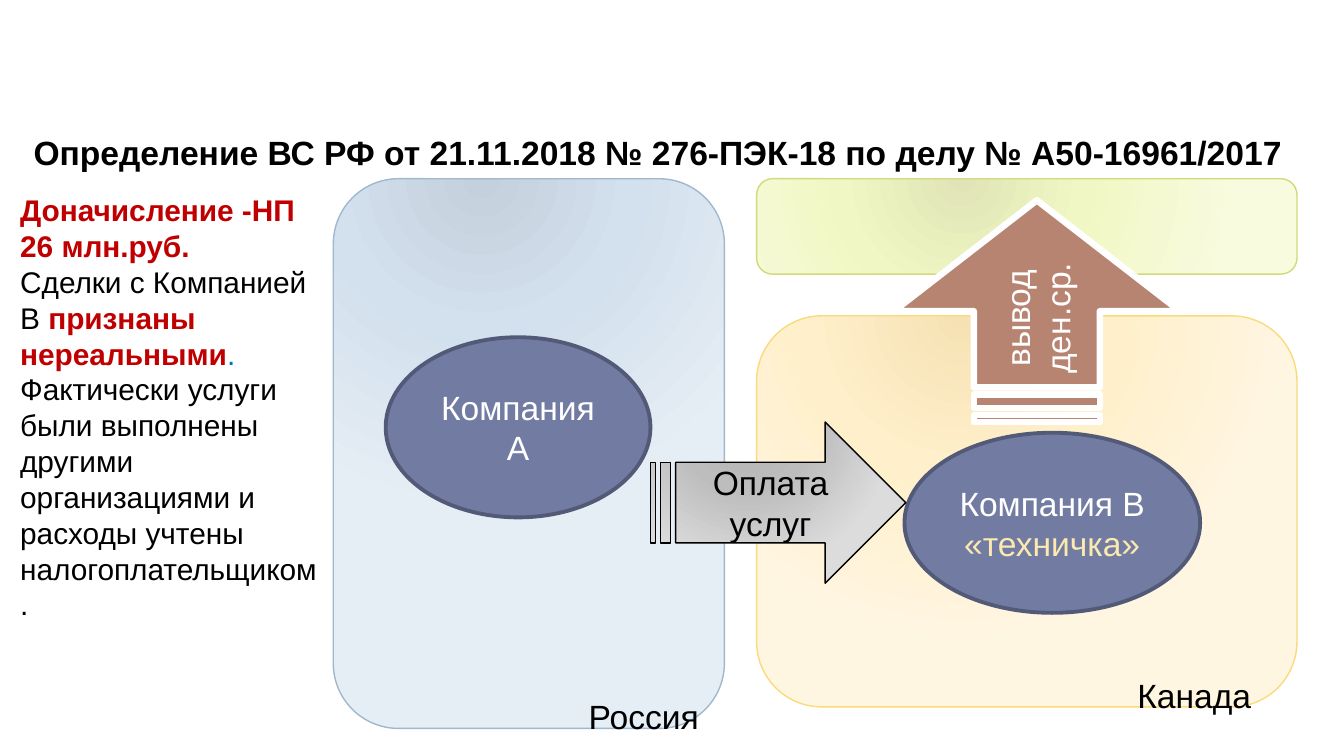
"""Build a slide on a tax dispute over payments to a shell company."""
from dataclasses import dataclass

from pptx import Presentation
from pptx.dml.color import RGBColor
from pptx.enum.shapes import MSO_SHAPE
from pptx.enum.text import MSO_ANCHOR, PP_ALIGN
from pptx.oxml import parse_xml
from pptx.oxml.ns import nsdecls, qn
from pptx.util import Inches, Pt


@dataclass(frozen=True)
class Theme:
    font: str = "Arial"
    size: int = 18
    body_size: int = 16
    black: str = "000000"
    white: str = "FFFFFF"
    red: str = "C00000"
    blue: str = "0070C0"
    cream: str = "FCE9AF"
    company: str = "727CA3"
    company_edge: str = "535A77"
    withdrawal: str = "B88472"
    russia: tuple = ("C4D0DC", "D3E0ED", "E6EEF5")
    russia_edge: str = "9FB8CD"
    canada: tuple = ("F5E1B3", "FFEFCA", "FFF6E2")
    canada_edge: str = "FADA7A"
    outlet: tuple = ("E0E4B6", "F1F7C4", "F8FBDE")
    outlet_edge: str = "D2DA7A"
    payment: tuple = ("AEAEAE", "BDBDBD", "DCDCDC")


THEME = Theme()


def write(shape, paragraphs, size=THEME.size, color=THEME.black,
          align=PP_ALIGN.CENTER, anchor=MSO_ANCHOR.MIDDLE):
    """Fill a shape with paragraphs of (text, color, bold) runs or plain strings."""
    frame = shape.text_frame
    frame.word_wrap = True
    frame.vertical_anchor = anchor
    frame.margin_left = frame.margin_right = Inches(0.05)
    frame.margin_top = frame.margin_bottom = Inches(0.05)
    for index, content in enumerate(paragraphs):
        paragraph = frame.paragraphs[0] if index == 0 else frame.add_paragraph()
        paragraph.alignment = align
        runs = [(content, color, False)] if isinstance(content, str) else content
        for text, run_color, bold in runs:
            run = paragraph.add_run()
            run.text = text
            run.font.name = THEME.font
            run.font.size = Pt(size)
            run.font.bold = bold
            run.font.color.rgb = RGBColor.from_string(run_color)


def add_text(slide, box, paragraphs, **text_format):
    """Add a text box."""
    write(slide.shapes.add_textbox(*map(Inches, box)), paragraphs, **text_format)


def fill_radial(shape, colors):
    """Give a shape a glow that spreads from above its top edge."""
    stops = "".join(
        f'<a:gs pos="{position}"><a:srgbClr val="{color}"/></a:gs>'
        for position, color in zip((0, 45000, 100000), colors))
    gradient = parse_xml(
        f'<a:gradFill {nsdecls("a")} rotWithShape="1"><a:gsLst>{stops}</a:gsLst>'
        '<a:path path="circle"><a:fillToRect l="38000" t="-20000" r="62000" b="120000"/>'
        '</a:path></a:gradFill>')
    shape.fill.background()
    properties = shape._element.spPr
    properties.replace(properties.find(qn("a:noFill")), gradient)


def add_figure(slide, kind, box, fill, edge, edge_width=0.75):
    """Add an outlined shape with a solid or radial fill."""
    figure = slide.shapes.add_shape(kind, *map(Inches, box))
    figure.shadow.inherit = False
    if isinstance(fill, tuple):
        fill_radial(figure, fill)
    else:
        figure.fill.solid()
        figure.fill.fore_color.rgb = RGBColor.from_string(fill)
    figure.line.color.rgb = RGBColor.from_string(edge)
    figure.line.width = Pt(edge_width)
    return figure


def add_company(slide, box, paragraphs):
    """Add a company ellipse with its name."""
    company = add_figure(slide, MSO_SHAPE.OVAL, box, THEME.company,
                         THEME.company_edge, 2.08)
    write(company, paragraphs, color=THEME.white)


def add_flow(slide, box, label, fill, edge, edge_width, color, shaft=0.5, rotation=0):
    """Add a striped arrow with its label."""
    arrow = add_figure(slide, MSO_SHAPE.STRIPED_RIGHT_ARROW, box, fill, edge, edge_width)
    arrow.adjustments[0] = shaft
    arrow.adjustments[1] = 0.5
    arrow.rotation = rotation
    write(arrow, [label], color=color)


def main():
    """Compose and save the slide."""
    deck = Presentation()
    deck.slide_width = Inches(10)
    deck.slide_height = deck.slide_width * 9 // 16
    slide = deck.slides.add_slide(deck.slide_layouts[6])

    for box, fill, edge in (
        ((5.63, 1.33, 4.02, 0.71), THEME.outlet, THEME.outlet_edge),
        ((5.63, 2.35, 4.02, 2.91), THEME.canada, THEME.canada_edge),
        ((2.48, 1.33, 2.91, 4.09), THEME.russia, THEME.russia_edge),
    ):
        add_figure(slide, MSO_SHAPE.ROUNDED_RECTANGLE, box, fill, edge)
    for box, country in (((8.16, 4.98, 1.2, 0.38), "Канада"),
                         ((4.05, 5.14, 1.2, 0.38), "Россия")):
        add_text(slide, box, [country], align=PP_ALIGN.RIGHT)

    add_text(slide, (0.2, 0.93, 9.69, 0.38),
             [[("Определение ВС РФ от 21.11.2018 № 276-ПЭК-18 по делу № А50-16961/2017",
                THEME.black, True)]],
             align=PP_ALIGN.LEFT, anchor=MSO_ANCHOR.TOP)

    add_company(slide, (2.87, 2.51, 1.97, 1.34), ["Компания А"])
    add_company(slide, (6.73, 3.22, 2.2, 1.34),
                ["Компания В", [("«техничка»", THEME.cream, False)]])
    add_flow(slide, (4.84, 3.14, 1.9, 1.2), "Оплата услуг",
             THEME.payment, THEME.black, 0.75, THEME.black)

    add_text(slide, (0.1, 1.38, 2.35, 3.33), [
        [("Доначисление -НП 26 млн.руб.", THEME.red, True)],
        [("Сделки с Компанией В ", THEME.black, False),
         ("признаны нереальными", THEME.red, True),
         (".", THEME.blue, False)],
        "Фактически услуги были выполнены другими",
        "организациями и расходы учтены налогоплательщиком.",
    ], size=THEME.body_size, align=PP_ALIGN.LEFT, anchor=MSO_ANCHOR.TOP)

    add_flow(slide, (6.89, 1.25, 1.65, 2.13), "вывод ден.ср.",
             THEME.withdrawal, THEME.white, 3.5, THEME.white, shaft=0.44, rotation=270)

    deck.save("out.pptx")


if __name__ == "__main__":
    main()
